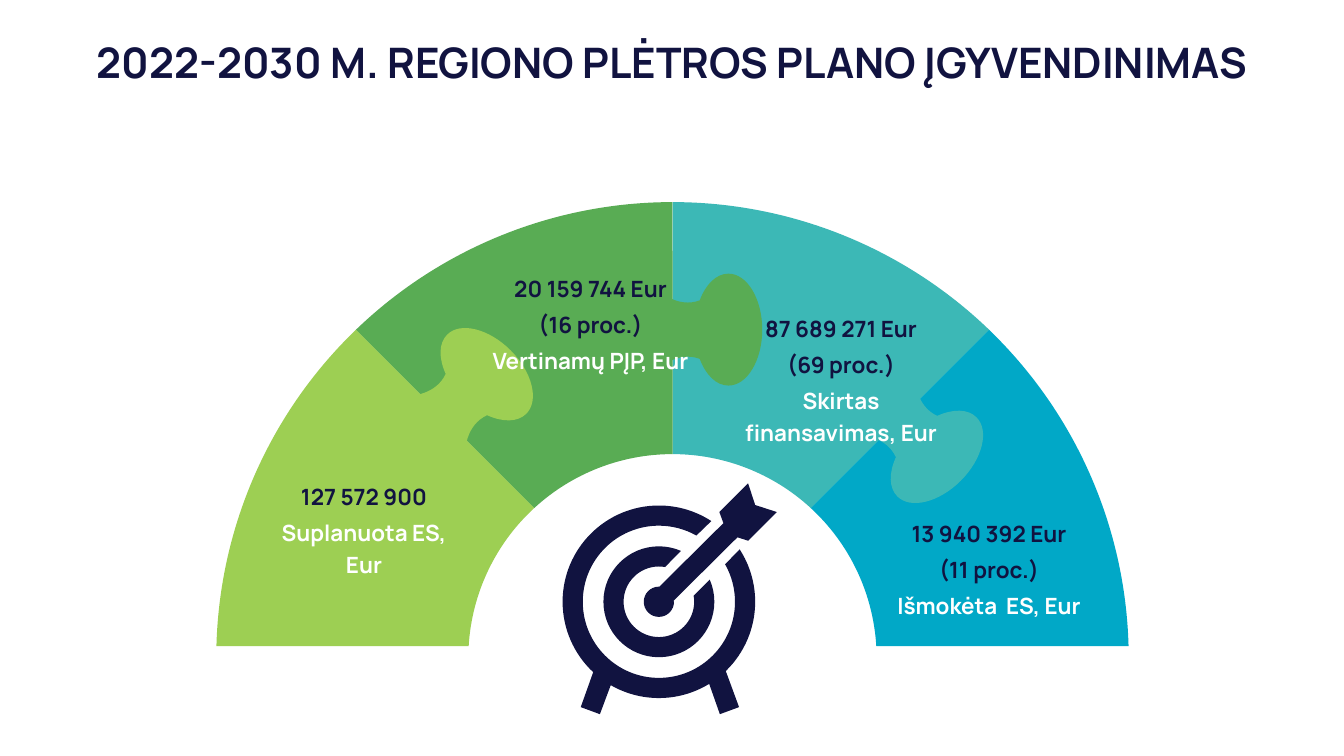
import math
from dataclasses import dataclass

from pptx import Presentation
from pptx import util as u
from pptx.dml.color import RGBColor
from pptx.enum import text
from pptx.oxml import ns, xmlchemy


@dataclass(frozen=True)
class Theme:
    font: str = "Manrope"
    navy: str = "111340"
    white: str = "FFFFFF"
    lime: str = "9DCF53"
    green: str = "59AC54"
    teal: str = "3CB8B6"
    blue: str = "01A8C7"
    title_size: int = 60
    label_size: int = 32
    line_pitch: float = 45
    paragraph_gap: float = 6.4


THEME = Theme()

# Arch: its cuts meet at the hub, its arcs are centred slightly below the hub
HUB = (13.34, 12.82)
ARC_DROP = 0.24
OUTER, INNER = 9.05, 4.05
SECTORS = [  # start angle, fill
    (180, THEME.lime),
    (315, THEME.blue),
    (270, THEME.teal),
    (225, THEME.green),
]

# Puzzle knob pointing right: Bezier points of its upper edge, from the tip
KNOB_EDGE = [
    (1.78, 0), (1.78, -0.61), (1.48, -1.11), (1.11, -1.11), (0.87, -1.11),
    (0.66, -0.9), (0.54, -0.58), (0.11, -0.42), (-0.25, -0.76), (-0.25, -0.76),
]
KNOB_NECK = (-0.43, -0.04)
KNOBS = [  # position, turn, fill
    ((13.34, 6.54), 0, THEME.green),
    ((17.8, 8.28), 45, THEME.teal),
    ((8.87, 8.21), -45, THEME.lime),
]

BULLSEYE = (13.07, 11.94)

LABELS = [  # left, top, width, height, figures, caption
    (5.11, 9.45, 4.22, 2.07, ["127 572 900"], "Suplanuota ES, Eur"),
    (9.56, 4.98, 4.31, 2.81, ["20 159 744 Eur", "(16 proc.)"], "Vertinamų PĮP, Eur"),
    (14.38, 6.1, 4.61, 2.81, ["87 689 271 Eur", "(69 proc.)"], "Skirtas finansavimas, Eur"),
    (17.42, 10.17, 4.4, 2.18, ["13 940 392 Eur", "(11 proc.)"], "Išmokėta  ES, Eur"),
]


# An outline is a list of steps: one point for a line, three for a Bezier curve
def curves(points):
    return [points[:1]] + [points[i:i + 3] for i in range(1, len(points), 3)]


def arc(center, radius, start, end):
    """Steps along an arc, split at the axes; degrees, clockwise from the right."""
    low, high = sorted((start, end))
    axes = range(90 * math.floor(low / 90), math.ceil(high) + 1, 90)
    stops = [low] + [a for a in axes if low < a < high] + [high]
    if start > end:
        stops.reverse()

    def polar(angle, reach):
        a = math.radians(angle)
        return (center[0] + radius * (math.cos(a) - reach * math.sin(a)),
                center[1] + radius * (math.sin(a) + reach * math.cos(a)))

    points = [polar(start, 0)]
    for a, b in zip(stops, stops[1:]):
        reach = 4 / 3 * math.tan(math.radians(b - a) / 4)
        points += [polar(a, reach), polar(b, -reach), polar(b, 0)]
    return curves(points)


def lines(*points):
    return [[point] for point in points]


def add_outline(slide, contours, color):
    builder = None
    for contour in contours:
        points = [(u.Inches(x), u.Inches(y)) for step in contour for x, y in step]
        if builder is None:
            builder = slide.shapes.build_freeform(*points[0])
        else:
            builder.move_to(*points[0])
        builder.add_line_segments(points[1:], close=True)
    outline = builder.convert_to_shape()

    # Join each three line points of a curve into one Bezier segment
    nodes = iter(list(outline.element.iter(ns.qn("a:lnTo"))))
    for step in (step for contour in contours for step in contour[1:]):
        segment = [next(nodes) for _ in step]
        if len(segment) == 3:
            curve = xmlchemy.OxmlElement("a:cubicBezTo")
            segment[0].addprevious(curve)
            for node in segment:
                curve.append(node[0])
                node.getparent().remove(node)

    outline.shadow.inherit = False
    outline.fill.solid()
    outline.fill.fore_color.rgb = RGBColor.from_string(color)
    outline.line.fill.background()


def add_sector(slide, start, color):
    center = (HUB[0], HUB[1] + ARC_DROP)

    def on_arc(cut, radius):
        shift = math.asin(ARC_DROP * math.cos(math.radians(cut)) / radius)
        return cut - math.degrees(shift)

    end = start + 45
    outer = arc(center, OUTER, on_arc(start, OUTER), on_arc(end, OUTER))
    inner = arc(center, INNER, on_arc(end, INNER), on_arc(start, INNER))
    add_outline(slide, [outer + inner], color)


def add_knob(slide, position, turn, color):
    cos, sin = math.cos(math.radians(turn)), math.sin(math.radians(turn))

    def place(points, side=1):
        return [(position[0] + x * cos - side * y * sin,
                 position[1] + x * sin + side * y * cos) for x, y in points]

    neck = [place([KNOB_NECK], side) for side in (1, -1)]
    lower = curves(place(KNOB_EDGE[::-1], -1))
    add_outline(slide, [curves(place(KNOB_EDGE)) + neck + lower], color)


def add_target(slide, color):
    # Rings are open towards the arrow; the outer one carries the legs
    inner_ring = (arc(BULLSEYE, 0.7, -80, -370)
                  + arc(BULLSEYE, 1.1, -23.5, 293.5))
    outer_ring = (arc(BULLSEYE, 1.51, -60.5, -389.5)
                  + arc(BULLSEYE, 1.91, -33, 46)
                  + lines((14.66, 14.03), (14.28, 14.17))
                  + arc(BULLSEYE, 1.91, 58.5, 120)
                  + lines((11.9, 14.17), (11.52, 14.03))
                  + arc(BULLSEYE, 1.91, 133, 303))
    arrow = (lines((14.84, 9.59), (14.98, 10.02), (15.41, 10.16), (14.84, 10.73),
                   (14.63, 10.66), (13.36, 11.92))
             + arc(BULLSEYE, 0.3, 0, 270)
             + lines((13.08, 11.64), (14.35, 10.38), (14.27, 10.16)))
    add_outline(slide, [inner_ring, outer_ring, arrow], color)


def add_text(slide, box, wordings, size, wrap=True):
    """Add centred bold paragraphs, given as (wording, colour) pairs."""
    frame = slide.shapes.add_textbox(*(u.Inches(v) for v in box)).text_frame
    frame.word_wrap = wrap
    frame.auto_size = text.MSO_AUTO_SIZE.SHAPE_TO_FIT_TEXT
    for i, (wording, color) in enumerate(wordings):
        paragraph = frame.add_paragraph() if i else frame.paragraphs[0]
        paragraph.alignment = text.PP_ALIGN.CENTER
        run = paragraph.add_run()
        run.text = wording
        run.font.name = THEME.font
        run.font.size = u.Pt(size)
        run.font.bold = True
        run.font.color.rgb = RGBColor.from_string(color)
    return frame


def add_label(slide, box, figures, caption):
    wordings = [(figure, THEME.navy) for figure in figures] + [(caption, THEME.white)]
    frame = add_text(slide, box, wordings, THEME.label_size)
    frame.vertical_anchor = text.MSO_ANCHOR.MIDDLE
    for i, paragraph in enumerate(frame.paragraphs):
        paragraph.line_spacing = u.Pt(THEME.line_pitch)
        if i:
            paragraph.space_before = u.Pt(THEME.paragraph_gap)


def main():
    prs = Presentation()
    prs.slide_width, prs.slide_height = u.Inches(26.66), u.Inches(15)
    slide = prs.slides.add_slide(prs.slide_layouts[6])

    # Puzzle arch and the target under it
    for start, color in SECTORS:
        add_sector(slide, start, color)
    for position, turn, color in KNOBS:
        add_knob(slide, position, turn, color)
    add_target(slide, THEME.navy)

    # Title and labels
    add_text(slide, (1.53, 0.67, 23.6, 1.11),
             [("2022-2030 M. REGIONO PLĖTROS PLANO ĮGYVENDINIMAS", THEME.navy)],
             THEME.title_size, wrap=False)
    for *box, figures, caption in LABELS:
        add_label(slide, box, figures, caption)

    prs.save("out.pptx")


if __name__ == "__main__":
    main()
